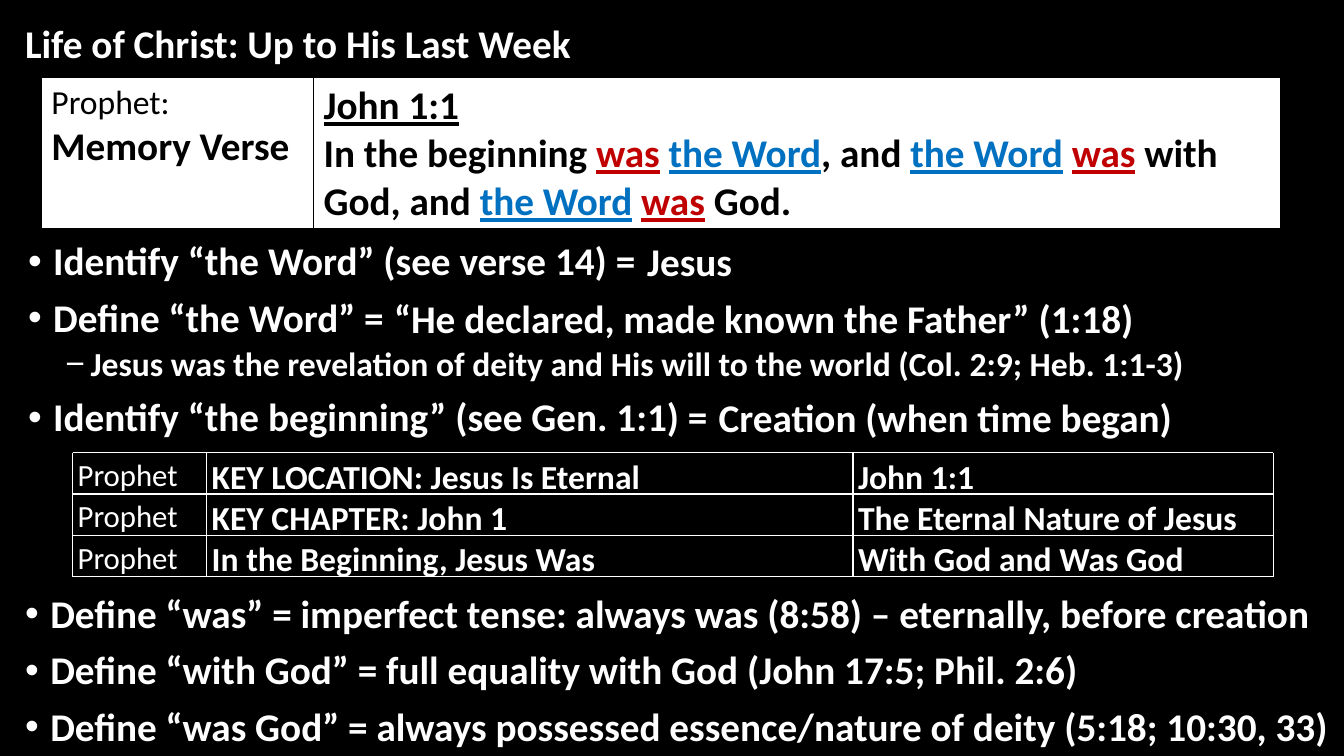
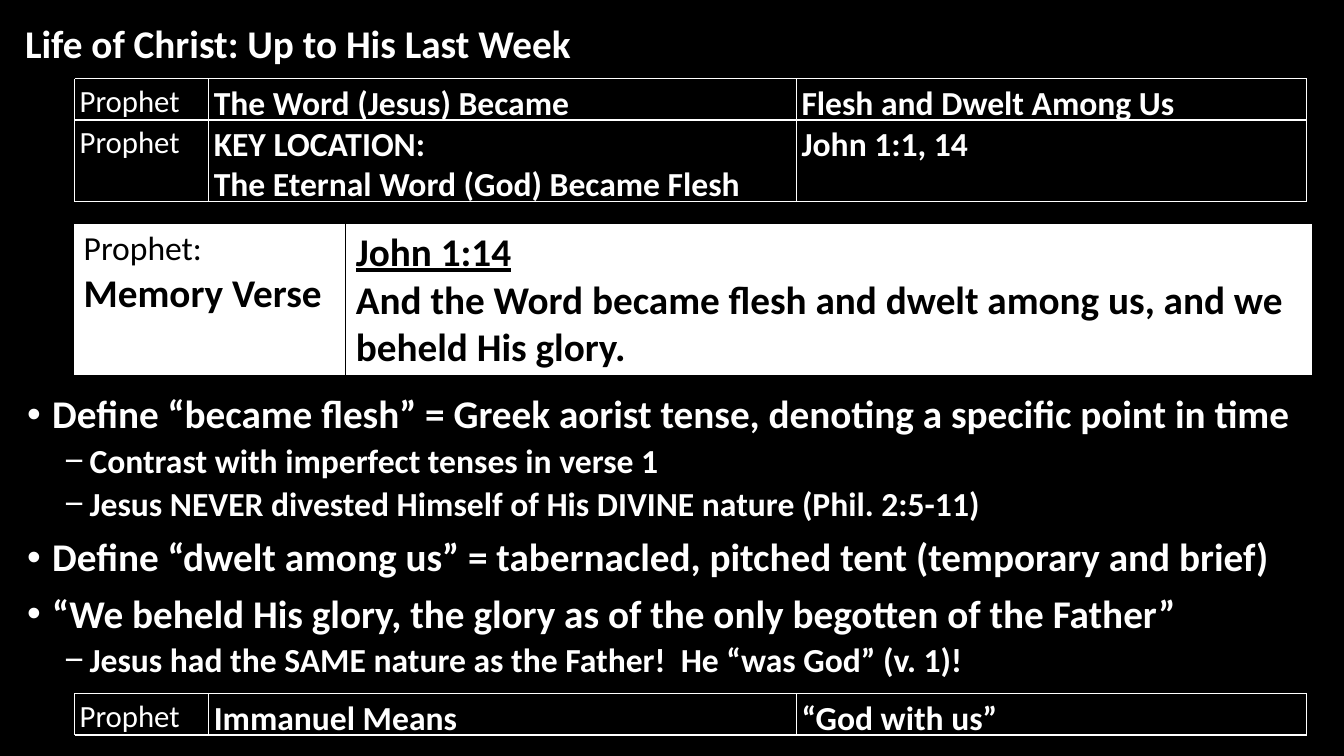
from itertools import accumulate

from lxml import etree
from pptx import Presentation
from pptx.dml.color import RGBColor
from pptx.enum.shapes import MSO_CONNECTOR
from pptx.oxml.ns import qn
from pptx.util import Inches, Pt

STRAIGHT = MSO_CONNECTOR.STRAIGHT
COLORS = {
    "black": "000000",
    "white": "FFFFFF",
    "red": "C00000",
    "blue": "0070C0",
}
FONT = "Calibri"
TITLE = "Life of Christ: Up to His Last Week"
LARGE, MEDIUM, SMALL = 28, 24, 22
BULLETS = (
    {"char": "•", "size": LARGE, "left": 0.25, "before": 10},
    {"char": "−", "size": MEDIUM, "left": 0.62, "before": 5},
)
HANGING = 0.25
ROW_HEIGHT = 0.41
LINE_STEP = 0.4
LABEL_WIDTH = 1.33
CELL_LEFT, CELL_TOP = 0.05, 0.03


def color(name):
    return RGBColor.from_string(COLORS[name])


def add_span(para, text, size, tint="white", bold=True, underline=None):
    span = para.add_run()
    span.text = text
    span.font.name = FONT
    span.font.size = Pt(size)
    span.font.bold = bold
    span.font.underline = underline
    span.font.color.rgb = color(tint)


def add_page(deck):
    page = deck.slides.add_slide(deck.slide_layouts[6])
    page.background.fill.solid()
    page.background.fill.fore_color.rgb = color("black")
    add_line_of_text(page, TITLE, 0.15, 0.14, 11.66)
    return page


def add_box(page, left, top, width, height):
    box = page.shapes.add_textbox(Inches(left), Inches(top), Inches(width), Inches(height))
    box.text_frame.word_wrap = True
    return box.text_frame


def add_line_of_text(page, text, left, top, width):
    frame = add_box(page, left, top, width, 0.57)
    add_span(frame.paragraphs[0], text, LARGE)


def add_bullets(page, items, left, top, width, height):
    frame = add_box(page, left, top, width, height)
    for index, (level, text) in enumerate(items):
        para = frame.add_paragraph() if index else frame.paragraphs[0]
        style = BULLETS[level]
        properties = para._p.get_or_add_pPr()
        properties.set("marL", str(Inches(style["left"])))
        properties.set("indent", str(-Inches(HANGING)))
        etree.SubElement(properties, qn("a:buFont")).set("typeface", "Arial")
        etree.SubElement(properties, qn("a:buChar")).set("char", style["char"])
        para.level = level
        para.line_spacing = 0.9
        para.space_before = Pt(style["before"] if index else 0)
        add_span(para, text, style["size"])


def set_borders(cell, tint):
    properties = cell._tc.get_or_add_tcPr()
    for index, side in enumerate(("lnL", "lnR", "lnT", "lnB")):
        line = etree.Element(qn(f"a:{side}"), w=str(Pt(1)))
        fill = etree.SubElement(line, qn("a:solidFill"))
        etree.SubElement(fill, qn("a:srgbClr")).set("val", COLORS[tint])
        properties.insert(index, line)


def add_verse(page, reference, verse, left, top):
    widths, height = (2.7, 9.59), 1.5
    table = page.shapes.add_table(
        1, len(widths), Inches(left), Inches(top), Inches(sum(widths)), Inches(height)
    ).table
    table.first_row = False
    table.horz_banding = False
    for column, width in zip(table.columns, widths):
        column.width = Inches(width)
    for cell in table.iter_cells():
        cell.fill.solid()
        cell.fill.fore_color.rgb = color("white")
        set_borders(cell, "black")
    label, quote = (cell.text_frame for cell in table.iter_cells())
    add_span(label.paragraphs[0], "Prophet:", MEDIUM, "black", bold=False)
    add_span(label.add_paragraph(), "Memory Verse", LARGE, "black")
    add_span(quote.paragraphs[0], reference, LARGE, "black", underline=True)
    para = quote.add_paragraph()
    for text, tint in verse:
        add_span(para, text, LARGE, tint, underline=True if tint != "black" else None)


def add_rule(page, start_x, start_y, end_x, end_y):
    rule = page.shapes.add_connector(
        STRAIGHT, Inches(start_x), Inches(start_y), Inches(end_x), Inches(end_y)
    )
    rule.line.color.rgb = color("white")
    rule.line.width = Pt(1)
    etree.SubElement(rule._element.spPr, qn("a:effectLst"))


def add_grid_text(page, text, left, top, width, size, bold):
    frame = add_box(page, left + CELL_LEFT, top + CELL_TOP, width - CELL_LEFT, ROW_HEIGHT)
    frame.margin_left = frame.margin_right = frame.margin_top = frame.margin_bottom = 0
    add_span(frame.paragraphs[0], text, size, bold=bold)


def add_prophet_grid(page, rows, left, top, widths):
    widths = (LABEL_WIDTH, *widths)
    heights = [ROW_HEIGHT + LINE_STEP * (max(map(len, row)) - 1) for row in rows]
    edges_x = list(accumulate(widths, initial=left))
    edges_y = list(accumulate(heights, initial=top))
    for x in edges_x:
        add_rule(page, x, edges_y[0], x, edges_y[-1])
    for y in edges_y:
        add_rule(page, edges_x[0], y, edges_x[-1], y)
    for row, y in zip(rows, edges_y):
        add_grid_text(page, "Prophet", left, y, LABEL_WIDTH, SMALL, False)
        for lines, x, width in zip(row, edges_x[1:], widths[1:]):
            for index, text in enumerate(lines):
                add_grid_text(page, text, x, y + index * LINE_STEP, width, MEDIUM, True)


def build_word_page(deck):
    page = add_page(deck)
    word, was = ("the Word", "blue"), ("was", "red")
    space = (" ", "black")
    add_verse(page, "John 1:1", (
        ("In the beginning ", "black"), was, space, word,
        (", and ", "black"), word, space, was,
        (" with God, and ", "black"), word, space, was, (" God.", "black"),
    ), 0.41, 0.77)
    add_bullets(page, (
        (0, "Identify “the Word” (see verse 14) ="),
        (0, "Define “the Word” ="),
        (1, "Jesus was the revelation of deity and His will to the world (Col. 2:9; Heb. 1:1-3)"),
        (0, "Identify “the beginning” (see Gen. 1:1) ="),
    ), 0.18, 2.35, 13, 2.18)
    add_bullets(page, (
        (0, "Define “was” = imperfect tense: always was (8:58) – eternally, before creation"),
        (0, "Define “with God” = full equality with God (John 17:5; Phil. 2:6)"),
        (0, "Define “was God” = always possessed essence/nature of deity (5:18; 10:30, 33)"),
    ), 0.15, 5.85, 13.18, 1.65)
    add_prophet_grid(page, (
        (("KEY LOCATION: Jesus Is Eternal",), ("John 1:1",)),
        (("KEY CHAPTER: John 1",), ("The Eternal Nature of Jesus",)),
        (("In the Beginning, Jesus Was",), ("With God and Was God",)),
    ), 0.72, 4.49, (6.41, 4.17))
    for text, left, top, width in (
        ("Jesus", 6.32, 2.31, 1.12),
        ("“He declared, made known the Father” (1:18)", 3.81, 2.87, 7.6),
        ("Creation (when time began)", 7.03, 3.85, 4.76),
    ):
        add_line_of_text(page, text, left, top, width)


def build_flesh_page(deck):
    page = add_page(deck)
    grid_left, grid_widths = 0.74, (5.83, 5.06)
    add_bullets(page, (
        (0, "Define “became flesh” = Greek aorist tense, denoting a specific point in time"),
        (1, "Contrast with imperfect tenses in verse 1"),
        (1, "Jesus NEVER divested Himself of His DIVINE nature (Phil. 2:5-11)"),
        (0, "Define “dwelt among us” = tabernacled, pitched tent (temporary and brief)"),
        (0, "“We beheld His glory, the glory as of the only begotten of the Father”"),
        (1, "Jesus had the SAME nature as the Father!  He “was God” (v. 1)!"),
    ), 0.17, 3.87, 13, 3.63)
    add_verse(page, "John 1:14", (
        ("And the Word became flesh and dwelt among us, and we beheld His glory.", "black"),
    ), 0.73, 2.22)
    add_prophet_grid(page, (
        (("The Word (Jesus) Became",), ("Flesh and Dwelt Among Us",)),
        (("KEY LOCATION:", "The Eternal Word (God) Became Flesh"), ("John 1:1, 14",)),
    ), grid_left, 0.78, grid_widths)
    add_prophet_grid(page, (
        (("Immanuel Means",), ("“God with us”",)),
    ), grid_left, 6.88, grid_widths)


def main():
    deck = Presentation()
    deck.slide_width = Inches(13.33)
    deck.slide_height = Inches(7.5)
    build_word_page(deck)
    build_flesh_page(deck)
    deck.save("out.pptx")


if __name__ == "__main__":
    main()
